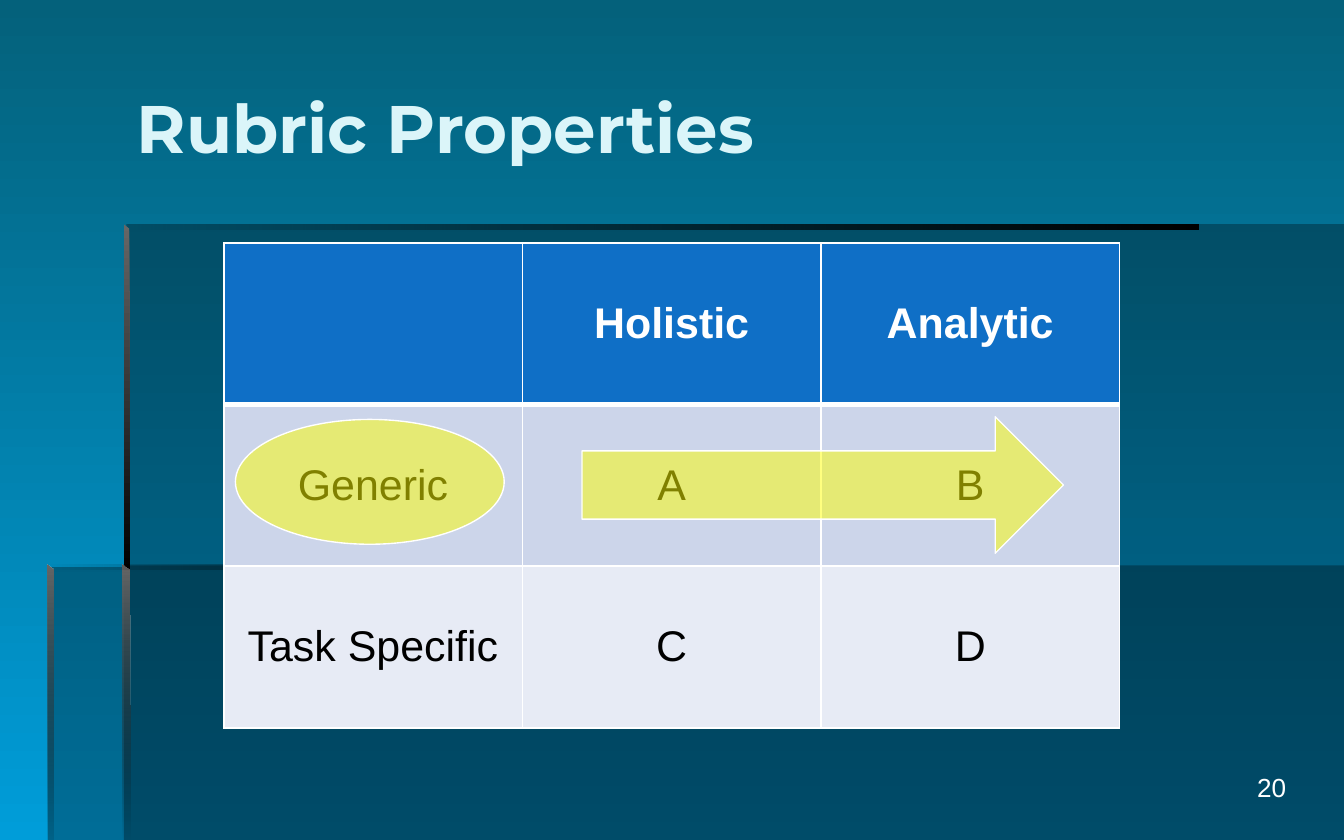
from lxml import etree
from pptx import Presentation
from pptx.dml.color import RGBColor
from pptx.enum.shapes import MSO_SHAPE
from pptx.enum.text import MSO_ANCHOR, PP_ALIGN
from pptx.oxml.ns import qn
from pptx.util import Cm, Pt

OVAL, ARROW = MSO_SHAPE.OVAL, MSO_SHAPE.RIGHT_ARROW
LEFT, CENTER, RIGHT = PP_ALIGN.LEFT, PP_ALIGN.CENTER, PP_ALIGN.RIGHT
TOP, MIDDLE = MSO_ANCHOR.TOP, MSO_ANCHOR.MIDDLE

WIDTH, HEIGHT = 25.4, 15.88
WASH = [("000000", 30)]
FADE_IN = [("000000", 0), ("000000", 100)]
BEVEL = [("666666", 100), ("000000", 100)]
BEVEL_OUT = [("666666", 100), ("000000", 0)]
BEVEL_FAINT = [("666666", 100), ("000000", 10)]
HIGHLIGHT = [("FFFF00", 50)]

PANELS = [
    ([(2.34, 10.69), (2.34, HEIGHT), (WIDTH, HEIGHT), (WIDTH, 10.69)], WASH, 0),
    ([(2.39, 10.72), (0.91, 10.72), (0.91, HEIGHT), (WIDTH, HEIGHT),
      (WIDTH, 4.24), (2.39, 4.24)], WASH, 0),
    ([(2.34, 4.24), (2.34, 4.34), (22.65, 4.34), (22.65, 4.24)], FADE_IN, 0),
    ([(2.34, 4.24), (2.34, 10.8), (2.46, 10.8), (2.44, 4.32)], BEVEL, 90),
    ([(2.31, HEIGHT), (2.46, HEIGHT), (2.44, 10.77), (2.31, 10.67)], BEVEL_OUT, 90),
    ([(0.89, 10.67), (0.89, 10.77), (13.59, 10.77), (13.59, 10.67)], FADE_IN, 0),
    ([(0.89, 10.67), (0.89, HEIGHT), (1.02, HEIGHT), (1.02, 10.77)], BEVEL_FAINT, 90),
]
RUBRIC = [["", "Holistic", "Analytic"], ["Generic", "A", "B"], ["Task Specific", "C", "D"]]
ROW_FILLS = ["0F6FC6", "CCD5EA", "E7EBF5"]


def colour(code):
    return RGBColor.from_string(code)


def add_colour(parent, code, opacity=100):
    node = etree.SubElement(parent, qn("a:srgbClr"), val=str(colour(code)))
    if opacity < 100:
        etree.SubElement(node, qn("a:alpha"), val=str(opacity * 1000))


def paint(fill, owner, stops, angle=0):
    fill.solid()
    solid = owner.find(qn("a:solidFill"))
    if len(stops) == 1:
        add_colour(solid, *stops[0])
        return
    gradient = etree.Element(qn("a:gradFill"), rotWithShape="1")
    stop_list = etree.SubElement(gradient, qn("a:gsLst"))
    for index, stop in enumerate(stops):
        position = index * 100000 // (len(stops) - 1)
        add_colour(etree.SubElement(stop_list, qn("a:gs"), pos=str(position)), *stop)
    etree.SubElement(gradient, qn("a:lin"), ang=str(angle * 60000), scaled="0")
    owner.replace(solid, gradient)


def write(frame, text, font="Arial", size=23, color="000000", bold=False,
          align=LEFT, anchor=TOP):
    frame.word_wrap = True
    frame.vertical_anchor = anchor
    para = frame.paragraphs[0]
    para.alignment = align
    span = para.add_run()
    span.text = text
    span.font.name, span.font.size, span.font.bold = font, Pt(size), bold
    span.font.color.rgb = colour(color)


class SlideBuilder:
    """Hold the style and the current slide, and add each kind of element."""

    line = "FFFFFF"

    def __init__(self, page):
        self.page = page

    def background(self, stops, angle):
        fill = self.page.background.fill
        fill.solid()
        paint(fill, self.page.element.find(".//" + qn("p:bgPr")), stops, angle)

    def panel(self, points, stops, angle):
        start, *rest = [(Cm(x), Cm(y)) for x, y in points]
        builder = self.page.shapes.build_freeform(*start)
        builder.add_line_segments(rest, close=True)
        shape = builder.convert_to_shape()
        shape.shadow.inherit = False
        shape.line.fill.background()
        paint(shape.fill, shape.element.spPr, stops, angle)

    def text(self, place, text, **style):
        box = self.page.shapes.add_textbox(*map(Cm, place))
        write(box.text_frame, text, **style)

    def marker(self, kind, place):
        shape = self.page.shapes.add_shape(kind, *map(Cm, place))
        shape.shadow.inherit = False
        paint(shape.fill, shape.element.spPr, HIGHLIGHT)
        shape.line.color.rgb = colour(self.line)
        shape.line.width = Pt(0.75)

    def border(self, cell, widths):
        properties = cell._tc.get_or_add_tcPr()
        for index, (side, width) in enumerate(widths.items()):
            edge = etree.Element(qn("a:ln" + side), w=str(Pt(width)))
            add_colour(etree.SubElement(edge, qn("a:solidFill")), self.line)
            properties.insert(index, edge)

    def table(self, place, rows, fills):
        frame = self.page.shapes.add_table(len(rows), len(rows[0]), *map(Cm, place))
        table = frame.table
        table.horz_banding = False
        for row, texts in enumerate(rows):
            header = row == 0
            for column, text in enumerate(texts):
                cell = table.cell(row, column)
                cell.fill.solid()
                cell.fill.fore_color.rgb = colour(fills[row])
                cell.vertical_anchor = MIDDLE
                self.border(cell, {"L": 1, "R": 1, "T": 3 if row == 1 else 1,
                                   "B": 3 if header else 1})
                if text:
                    write(cell.text_frame, text, bold=header, align=CENTER,
                          color="FFFFFF" if header else "000000", anchor=MIDDLE)


def main():
    deck = Presentation()
    deck.slide_width, deck.slide_height = Cm(WIDTH), Cm(HEIGHT)
    slide = SlideBuilder(deck.slides.add_slide(deck.slide_layouts[6]))
    slide.background([("04617B", 100), ("009DD9", 100)], 90)
    for points, stops, angle in PANELS:
        slide.panel(points, stops, angle)
    slide.text((2.34, 1.07, 20.12, 2.64), "Rubric Properties", font="Montserrat",
               size=36, color="DBF5F9", bold=True, anchor=MIDDLE)
    slide.table((4.23, 4.59, 16.93, 9.17), RUBRIC, ROW_FILLS)
    slide.text((19.28, 14.45, 5.28, 1.09), "20", size=14, color="FFFFFF", align=RIGHT)
    slide.marker(OVAL, (4.45, 7.93, 5.08, 2.36))
    slide.marker(ARROW, (11, 7.88, 9.1, 2.58))
    deck.save("out.pptx")


if __name__ == "__main__":
    main()
